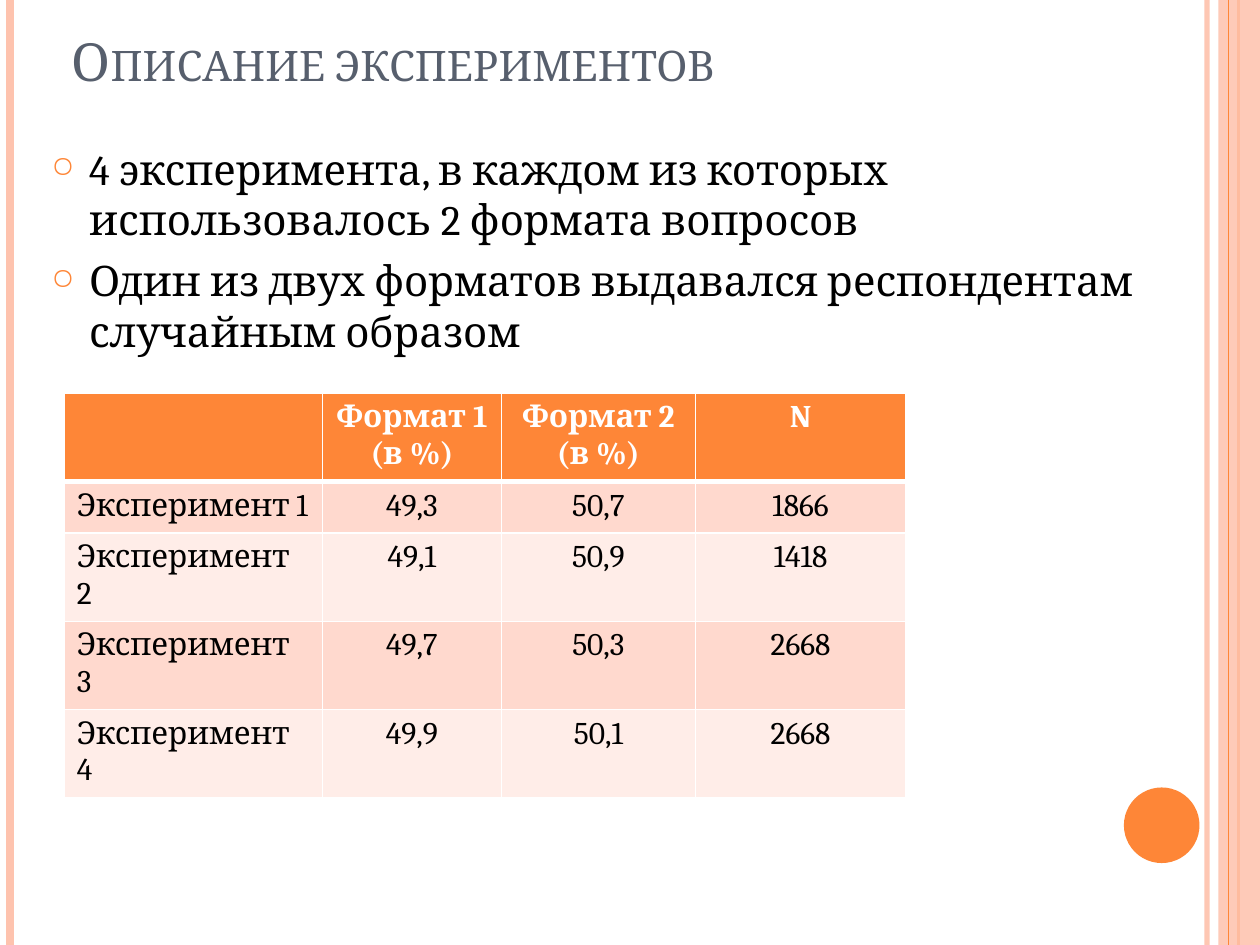
from lxml import etree
from pptx import Presentation
from pptx.dml.color import RGBColor
from pptx.enum.shapes import MSO_CONNECTOR, MSO_SHAPE
from pptx.enum.text import MSO_ANCHOR, PP_ALIGN
from pptx.oxml.ns import qn
from pptx.util import Inches, Pt

STRAIGHT = MSO_CONNECTOR.STRAIGHT
RECTANGLE, OVAL = MSO_SHAPE.RECTANGLE, MSO_SHAPE.OVAL
TOP, BOTTOM = MSO_ANCHOR.TOP, MSO_ANCHOR.BOTTOM
LEFT, CENTER = PP_ALIGN.LEFT, PP_ALIGN.CENTER

ORANGE = RGBColor(0xFE, 0x86, 0x37)
PEACH = RGBColor(0xFE, 0xC3, 0xAE)
SLATE = RGBColor(0x57, 0x5F, 0x6D)
BLACK = RGBColor(0, 0, 0)
WHITE = RGBColor(0xFF, 0xFF, 0xFF)
BANDS = (RGBColor(0xFF, 0xD9, 0xCE), RGBColor(0xFF, 0xED, 0xE8))

FONT = "Cambria"
WIDTH, HEIGHT = 10, 7.5
TITLE_FORMAT = {"name": FONT, "size": Pt(30)}
BODY_FORMAT = {"name": FONT, "size": Pt(24)}
HEADER_FORMAT = {"name": FONT, "size": Pt(18), "bold": True}
CELL_FORMAT = {"name": FONT, "size": Pt(18), "bold": False}

TITLE = "Описание экспериментов"
POINTS = (
    "4 эксперимента, в каждом из которых использовалось 2 формата вопросов",
    "Один из двух форматов выдавался респондентам случайным образом",
)
ROWS = (
    ("", "Формат 1 (в %)", "Формат 2 (в %)", "N"),
    ("Эксперимент 1", "49,3", "50,7", "1866"),
    ("Эксперимент 2", "49,1", "50,9", "1418"),
    ("Эксперимент 3", "49,7", "50,3", "2668"),
    ("Эксперимент 4", "49,9", "50,1", "2668"),
)
COLUMN_WIDTHS = (2.05, 1.42, 1.54, 1.67)


def format_font(font, values, color):
    for name, value in values.items():
        setattr(font, name, value)
    font.color.rgb = color


def set_alpha(color_parent, percent):
    color = next(color_parent.iter(qn("a:srgbClr")))
    etree.SubElement(color, qn("a:alpha"), val=str(percent * 1000))


def add_stripe(slide, x, color, width, alpha=100):
    """Draw a vertical line over the whole height of the slide."""
    line = slide.shapes.add_connector(
        STRAIGHT, Inches(x), 0, Inches(x), Inches(HEIGHT))
    line.line.color.rgb = color
    line.line.width = Pt(width)
    properties = line._element.spPr
    if alpha < 100:
        set_alpha(properties, alpha)
    etree.SubElement(properties, qn("a:effectLst"))


def add_plain_shape(slide, kind, box, color):
    shape = slide.shapes.add_shape(kind, *map(Inches, box))
    shape.shadow.inherit = False
    shape.fill.solid()
    shape.fill.fore_color.rgb = color
    shape.line.fill.background()
    return shape


def add_decoration(slide):
    add_stripe(slide, 9.58, PEACH, 3, 93)
    add_stripe(slide, 0.08, PEACH, 4.5)
    add_stripe(slide, 9.83, ORANGE, 1.5)
    band = add_plain_shape(slide, RECTANGLE, (9.67, 0, WIDTH - 9.67, HEIGHT), PEACH)
    set_alpha(band._element.spPr, 87)
    add_stripe(slide, 9.75, ORANGE, 0.75)
    add_plain_shape(slide, OVAL, (8.92, 6.25, 0.6, 0.6), ORANGE)


def add_text_frame(slide, box, anchor):
    frame = slide.shapes.add_textbox(*map(Inches, box)).text_frame
    frame.word_wrap = True
    frame.vertical_anchor = anchor
    return frame


def add_title(slide, box):
    run = add_text_frame(slide, box, BOTTOM).paragraphs[0].add_run()
    run.text = TITLE
    format_font(run.font, TITLE_FORMAT, SLATE)
    run.font._element.set("cap", "small")


def add_bullet(paragraph):
    properties = paragraph._p.get_or_add_pPr()
    properties.set("marL", str(Inches(0.3)))
    properties.set("indent", str(-Inches(0.3)))
    color = etree.SubElement(properties, qn("a:buClr"))
    etree.SubElement(color, qn("a:srgbClr"), val=str(ORANGE))
    etree.SubElement(properties, qn("a:buSzPct"), val="70000")
    etree.SubElement(properties, qn("a:buChar"), char="○")


def add_points(slide, box):
    frame = add_text_frame(slide, box, TOP)
    for index, text in enumerate(POINTS):
        paragraph = frame.add_paragraph() if index else frame.paragraphs[0]
        paragraph.space_before = Pt(6)
        add_bullet(paragraph)
        run = paragraph.add_run()
        run.text = text
        format_font(run.font, BODY_FORMAT, BLACK)


def add_borders(cell, widths):
    properties = cell._tc.get_or_add_tcPr()
    for side, width in widths.items():
        line = etree.SubElement(properties, qn(f"a:ln{side}"), w=str(Pt(width)))
        fill = etree.SubElement(line, qn("a:solidFill"))
        etree.SubElement(fill, qn("a:srgbClr"), val=str(WHITE))


def add_results_table(slide, box):
    table = slide.shapes.add_table(
        len(ROWS), len(COLUMN_WIDTHS), *map(Inches, box)).table
    for column, width in zip(table.columns, COLUMN_WIDTHS):
        column.width = Inches(width)
    for row_index, row in enumerate(ROWS):
        table.rows[row_index].height = Inches(0.41)
        header = row_index == 0
        widths = {"L": 1, "R": 1,
                  "T": 3 if row_index == 1 else 1, "B": 3 if header else 1}
        for column_index, text in enumerate(row):
            cell = table.cell(row_index, column_index)
            add_borders(cell, widths)
            cell.fill.solid()
            cell.fill.fore_color.rgb = ORANGE if header else BANDS[(row_index - 1) % 2]
            cell.text = text
            paragraph = cell.text_frame.paragraphs[0]
            paragraph.alignment = CENTER if column_index else LEFT
            for run in paragraph.runs:
                format_font(run.font, HEADER_FORMAT if header else CELL_FORMAT,
                            WHITE if header else BLACK)


def main():
    presentation = Presentation()
    presentation.slide_width = Inches(WIDTH)
    presentation.slide_height = Inches(HEIGHT)
    slide = presentation.slides.add_slide(presentation.slide_layouts[6])
    add_decoration(slide)
    add_title(slide, (0.47, 0.08, 8.17, 0.7))
    add_points(slide, (0.31, 1.09, 9.22, 5.99))
    add_results_table(slide, (0.51, 3.12, sum(COLUMN_WIDTHS), 0.41 * len(ROWS)))
    presentation.save("out.pptx")


if __name__ == "__main__":
    main()
